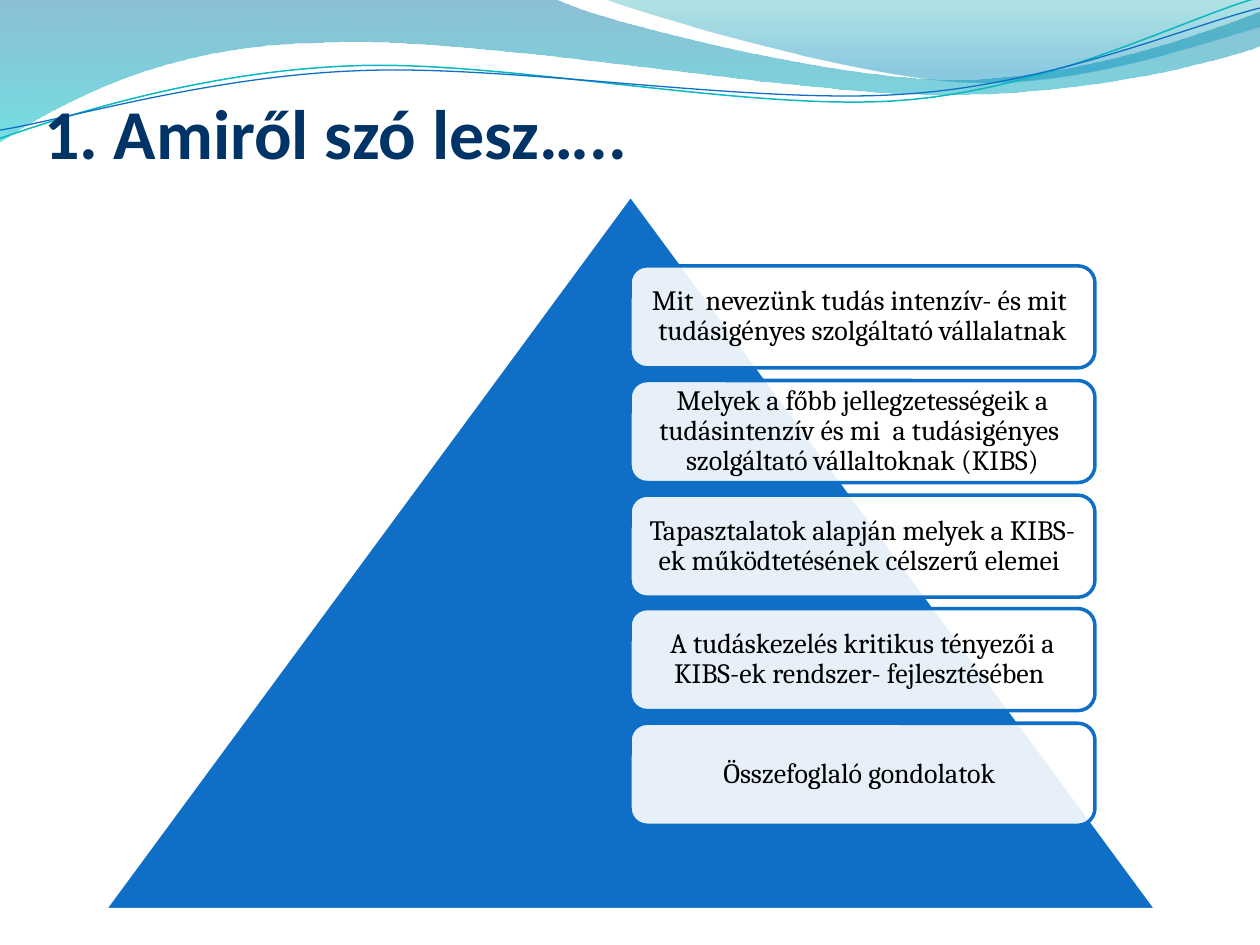
import math

from lxml import etree
from pptx import Presentation, util as u
from pptx.dml.color import RGBColor
from pptx.enum import shapes, text
from pptx.oxml import ns

SCALE = 9144  # EMU per px, 100 px to the inch
COLORS = {"blue": "0F6FC6", "teal": "0AB8BF", "navy": "003366",
          "white": "FFFFFF", "black": "000000",
          "wave_top": "0074A1", "wave_bottom": "00C6CF",
          "crest_top": "00A1A9", "crest_bottom": "008BBF"}
RGB = {name: RGBColor.from_string(value) for name, value in COLORS.items()}


def add_curve(page, pieces, closed):
    """Draw 2-number pieces as straight lines and 6-number pieces as Bezier curves."""
    points = [piece[n:n + 2] for piece in pieces for n in range(0, len(piece), 2)]
    builder = page.shapes.build_freeform(*points[0], scale=SCALE)
    builder.add_line_segments(points[1:], close=closed)
    curve = builder.convert_to_shape()
    curve.shadow.inherit = False
    segments = iter(list(curve.element.iter(ns.qn("a:lnTo"))))
    for piece in pieces[1:]:
        segment = next(segments)
        if len(piece) == 6:
            segment.tag = ns.qn("a:cubicBezTo")
            for _ in range(2):
                extra = next(segments)
                segment.append(extra[0])
                extra.getparent().remove(extra)
    return curve


def set_opacity(color_parent, percent):
    color = next(color_parent.iter(ns.qn("a:srgbClr")))
    etree.SubElement(color, ns.qn("a:alpha")).set("val", str(percent * 1000))


deck = Presentation()
deck.slide_width, deck.slide_height = 1000 * SCALE, 750 * SCALE
page = deck.slides.add_slide(deck.slide_layouts[6])

# Waves across the top: outline, then gradient stops (position, colour, opacity)
waves = [
    ([(0, -1), (440, -1), (476, 17, 664, 63, 758, 63), (853, 63, 958, 26, 1000, 9),
      (1001, 36), (983, 44, 870, 76, 746, 75), (622, 75, 382, 28, 257, 34),
      (129, 35, 46, 83, -1, 113), (0, -1)],
     [(0, "wave_top", 45), (1, "wave_bottom", 55)]),
    ([(479, -1), (509, 11, 682, 62, 769, 65), (856, 69, 961, 32, 1000, 21),
      (1000, 0), (479, -1)],
     [(0, "crest_top", 30), (0.8, "crest_bottom", 45)]),
]
for outline, stops in waves:
    wave = add_curve(page, outline, True)
    wave.line.fill.background()
    wave.fill.gradient()
    wave.fill.gradient_angle = 270
    nodes = wave.element.iter(ns.qn("a:gs"))
    for stop, node, (position, color, opacity) in zip(wave.fill.gradient_stops, nodes, stops):
        stop.position = position
        stop.color.rgb = RGB[color]
        set_opacity(node, opacity)

# Thin strands, laid out level and then tilted about their centre
TILT = 2.7
sin, cos = math.sin(math.radians(TILT)), math.cos(math.radians(TILT))
strands = [
    ([(-2, 111), (48, 93, 158, 57, 277, 52), (395, 47, 593, 89, 713, 80),
      (833, 71, 938, 15, 998, -2)], (499, 57.5), "teal", 0.85),
    ([(-2, 104), (47, 96, 164, 61, 283, 56), (403, 51, 597, 83, 717, 75),
      (836, 67, 941, 21, 1000, 6)], (499.5, 59), "blue", 0.75),
]
for outline, (mid_x, mid_y), color, width in strands:
    level = []
    for piece in outline:
        turned = []
        for x, y in zip(piece[::2], piece[1::2]):
            dx, dy = x - mid_x, y - mid_y
            turned += [mid_x + dx * cos - dy * sin, mid_y + dx * sin + dy * cos]
        level.append(turned)
    strand = add_curve(page, level, False)
    strand.rotation = 360 - TILT
    strand.fill.background()
    strand.line.color.rgb = RGB[color]
    strand.line.width = u.Pt(width)

# Pyramid
pyramid = page.shapes.add_shape(shapes.MSO_SHAPE.ISOSCELES_TRIANGLE,
                                *(n * SCALE for n in (83, 155, 835, 567)))
pyramid.shadow.inherit = False
pyramid.fill.solid()
pyramid.fill.fore_color.rgb = RGB["blue"]
pyramid.line.color.rgb = RGB["white"]
pyramid.line.width = u.Pt(2)

# Topic cards
topics = [
    "Mit  nevezünk tudás intenzív- és mit  tudásigényes szolgáltató vállalatnak",
    "Melyek a főbb jellegzetességeik a tudásintenzív és mi  a tudásigényes  "
    "szolgáltató vállaltoknak (KIBS)",
    "Tapasztalatok alapján melyek a KIBS- ek működtetésének célszerű elemei ",
    "A tudáskezelés kritikus tényezői a KIBS-ek rendszer- fejlesztésében ",
    "Összefoglaló gondolatok ",
]
FIRST_TOP, LAST_TOP = 211, 574
for row, topic in enumerate(topics):
    top = FIRST_TOP + round(row * (LAST_TOP - FIRST_TOP) / (len(topics) - 1))
    card = page.shapes.add_shape(shapes.MSO_SHAPE.ROUNDED_RECTANGLE,
                                 *(n * SCALE for n in (500, top, 369, 81)))
    card.shadow.inherit = False
    card.fill.solid()
    card.fill.fore_color.rgb = RGB["white"]
    set_opacity(card.element.spPr, 90)
    card.line.color.rgb = RGB["blue"]
    card.line.width = u.Pt(2)
    frame = card.text_frame
    frame.word_wrap = True
    frame.vertical_anchor = text.MSO_ANCHOR.MIDDLE
    frame.margin_left = frame.margin_right = 7 * SCALE
    frame.margin_top = frame.margin_bottom = 3 * SCALE
    para = frame.paragraphs[0]
    para.alignment = text.PP_ALIGN.CENTER
    para.line_spacing = 0.9
    span = para.add_run()
    span.text = topic
    span.font.name = "Cambria"
    span.font.size = u.Pt(16)
    span.font.color.rgb = RGB["black"]

# Title
box = page.shapes.add_textbox(*(n * SCALE for n in (35, 28, 923, 110)))
frame = box.text_frame
frame.word_wrap = True
frame.vertical_anchor = text.MSO_ANCHOR.BOTTOM
frame.margin_left = frame.margin_right = frame.margin_bottom = 0
frame.margin_top = 5 * SCALE
span = frame.paragraphs[0].add_run()
span.text = "1. Amiről szó lesz….."
span.font.name = "Calibri"
span.font.size = u.Pt(40)
span.font.bold = True
span.font.color.rgb = RGB["navy"]

deck.save("out.pptx")
